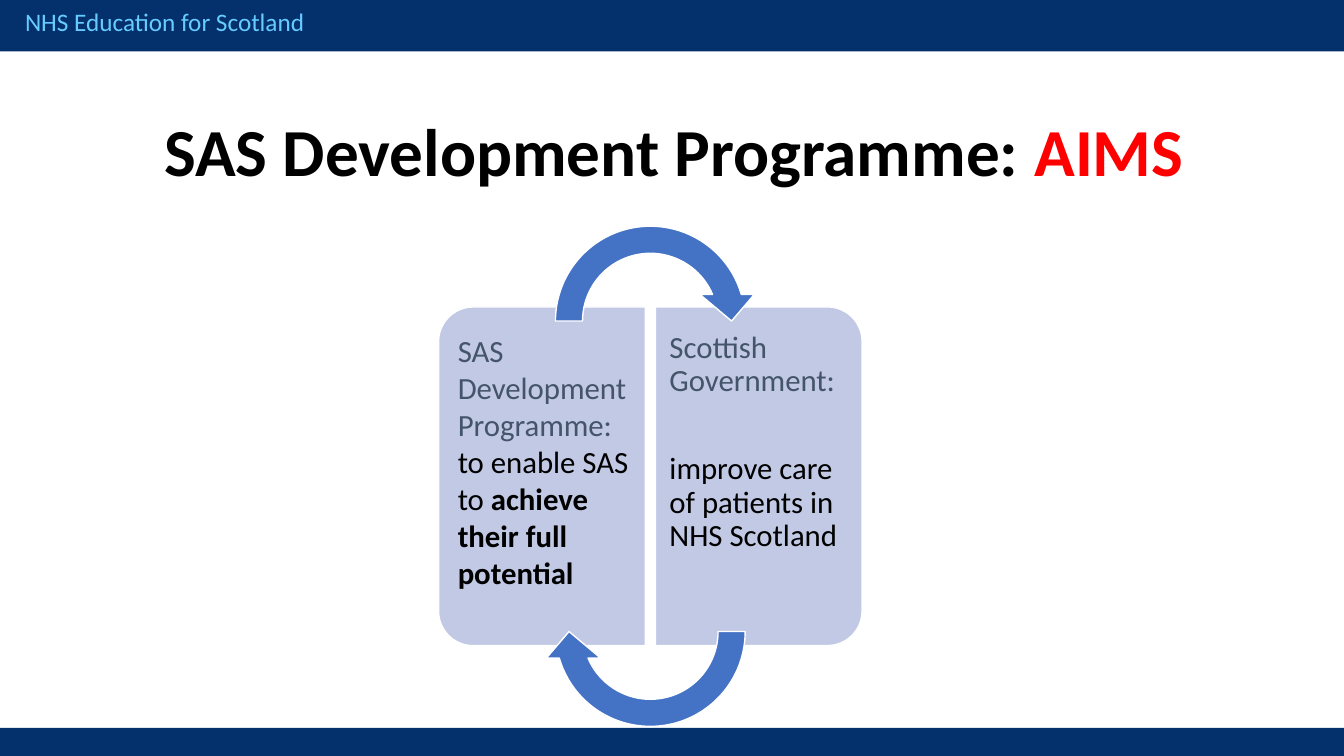
from pptx import Presentation
from pptx.dml.color import RGBColor
from pptx.enum import shapes, text
from pptx.util import Inches, Pt

NAVY = RGBColor(0x04, 0x30, 0x6C)
SKY = RGBColor(0x66, 0xCC, 0xFF)
LILAC = RGBColor(0xC1, 0xC9, 0xE4)
BLUE = RGBColor(0x44, 0x72, 0xC4)
SLATE = RGBColor(0x44, 0x54, 0x6A)
RED = RGBColor(0xFF, 0x00, 0x00)
BLACK = RGBColor(0x00, 0x00, 0x00)
WHITE = RGBColor(0xFF, 0xFF, 0xFF)
SHAPE = shapes.MSO_SHAPE


def set_attrs(obj, values):
    for name, value in values.items():
        setattr(obj, name, value)


def add_shape(slide, kind, box, fill, line=None, rotation=0, adjustments=()):
    sp = slide.shapes.add_shape(kind, *map(Inches, box))
    set_attrs(sp, {"rotation": rotation})
    sp.shadow.inherit = False
    sp.fill.solid()
    sp.fill.fore_color.rgb = fill
    if line is None:
        sp.line.fill.background()
    else:
        sp.line.color.rgb = line
        sp.line.width = Pt(1)
    for i, value in enumerate(adjustments):
        sp.adjustments[i] = value


def add_runs(p, size, runs):
    for content, color, bold in runs:
        r = p.add_run()
        r.text = content
        set_attrs(r.font, {"name": "Calibri", "size": Pt(size), "bold": bold})
        r.font.color.rgb = color


def add_text(slide, box, size, paragraphs, frame=None, paragraph=None):
    tf = slide.shapes.add_textbox(*map(Inches, box)).text_frame
    set_attrs(tf, {"word_wrap": True, **(frame or {})})
    for i, runs in enumerate(paragraphs):
        p = tf.add_paragraph() if i else tf.paragraphs[0]
        set_attrs(p, paragraph or {})
        if i:
            p.space_before = Pt(39)
        add_runs(p, size, runs)


def add_bands(slide, width, height):
    add_shape(slide, SHAPE.RECTANGLE, (0, 0, width, 0.51), NAVY)
    add_shape(slide, SHAPE.RECTANGLE, (0, height - 0.28, width, 0.28), NAVY)
    add_text(slide, (0.15, 0.01, 5.66, 0.4), 18,
             [[("NHS Education for Scotland", SKY, False)]])


def add_title(slide, box):
    sp = slide.shapes.title
    set_attrs(sp, dict(zip(("left", "top", "width", "height"), map(Inches, box))))
    tf = sp.text_frame
    set_attrs(tf, {"word_wrap": True, "auto_size": text.MSO_AUTO_SIZE.NONE,
                   "vertical_anchor": text.MSO_ANCHOR.TOP})
    p = tf.paragraphs[0]
    p.alignment = text.PP_ALIGN.CENTER
    add_runs(p, 48, [("SAS Development Programme: ", BLACK, True),
                     ("AIMS", RED, True)])


def add_cycle(slide, box):
    left, top, width, height = box
    mid_x, mid_y = left + width / 2, top + height / 2
    panel_w, panel_h, arrow, text_w, text_h = 2.05, 3.36, 2.15, 1.95, 3.16
    insets = {"margin_top": Inches(0.15), "margin_bottom": Inches(0.15)}
    programme = [[("SAS Development Programme: ", SLATE, False),
                  ("to enable SAS to ", BLACK, False),
                  ("achieve their full potential", BLACK, True)]]
    government = [[("Scottish Government:", SLATE, False)],
                  [("improve care of patients in NHS Scotland", BLACK, False)]]
    panels = [
        (left, 270, left + 0.1, programme, (0.09, 0.14), {}),
        (left + width - panel_w, 90, mid_x + 0.05, government, (0.14, 0.09),
         {"line_spacing": 0.9}),
    ]
    for x, rotation, text_x, paragraphs, sides, spacing in panels:
        add_shape(slide, SHAPE.ROUND_2_SAME_RECTANGLE,
                  (x + (panel_w - panel_h) / 2, mid_y - panel_w / 2, panel_h, panel_w),
                  LILAC, WHITE, rotation, (0.167, 0))
        frame = {**insets, "margin_left": Inches(sides[0]),
                 "margin_right": Inches(sides[1])}
        add_text(slide, (text_x, mid_y - text_h / 2, text_w, text_h), 22,
                 paragraphs, frame, spacing)
    for y, rotation in ((top, 0), (top + height - arrow, 180)):
        add_shape(slide, SHAPE.CIRCULAR_ARROW, (mid_x - arrow / 2, y, arrow, arrow),
                  BLUE, WHITE, rotation, (0.125, 11.42319, 204.57681, 108, 0.125))


def main():
    prs = Presentation()
    set_attrs(prs, {"slide_width": Inches(13.33), "slide_height": Inches(7.5)})
    slide = prs.slides.add_slide(prs.slide_layouts[5])
    add_bands(slide, 13.33, 7.5)
    add_title(slide, (1.08, 1.03, 11.21, 0.76))
    add_cycle(slide, (4.35, 2.11, 4.2, 5.23))
    prs.save("out.pptx")


if __name__ == "__main__":
    main()
